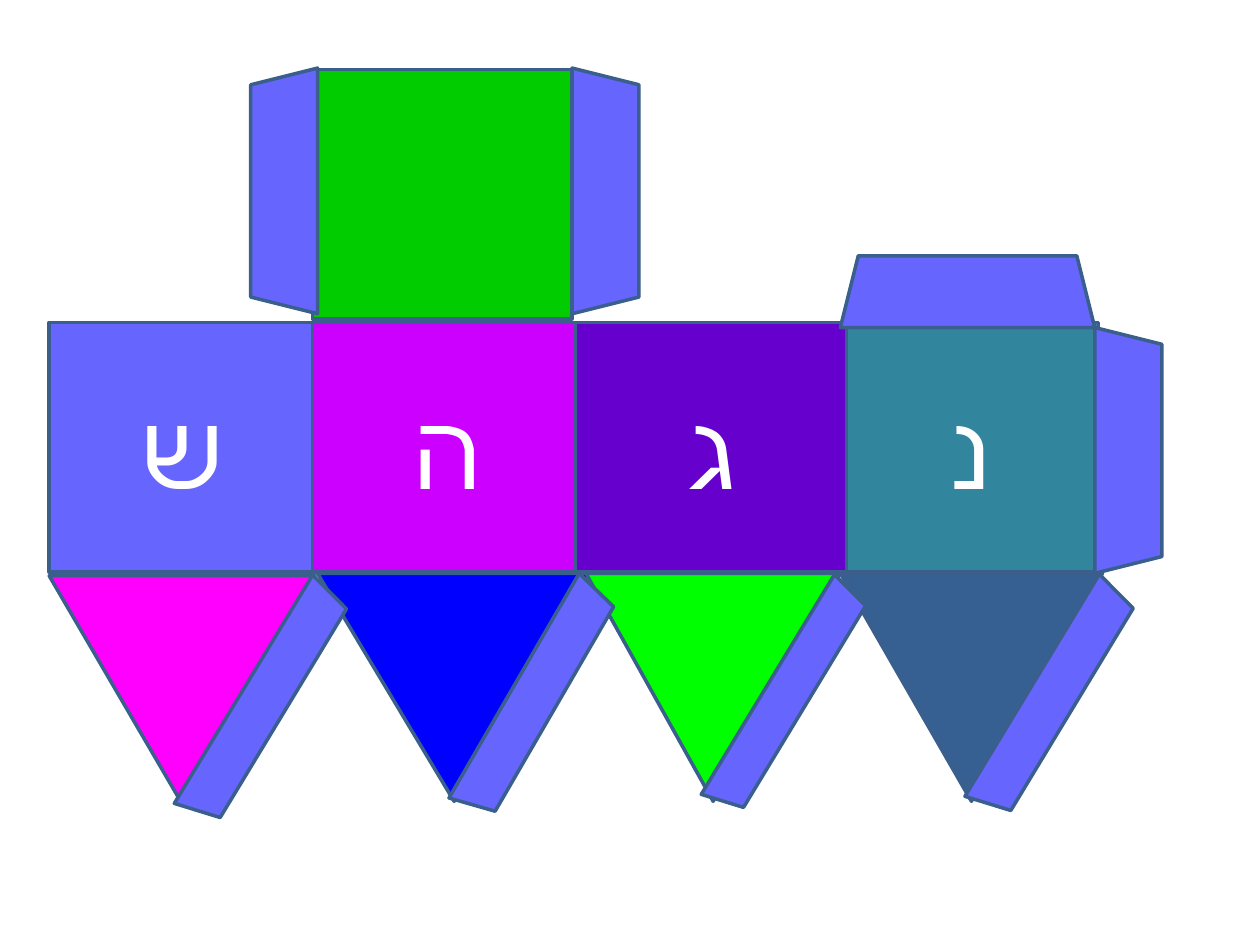
"""Build a one-page cut-and-fold dreidel net with four Hebrew letters."""
from dataclasses import dataclass

from lxml import etree
from pptx import Presentation
from pptx.dml.color import RGBColor
from pptx.enum import shapes, text
from pptx.oxml import ns
from pptx.util import Pt


@dataclass(frozen=True)
class Theme:
    font: str = "Lato"
    letter_size: int = 60
    letter: str = "FFFFFF"
    outline: str = "3A5F8C"
    outline_width: int = 2
    tab: str = "6666FF"


THEME = Theme()
KIND = shapes.MSO_SHAPE
PAGE_SIZE = (720, 540)

FACE_TOP, FACE_HEIGHT = 184.3, 142.6
LID_TOP = 39.6
POINT_TOP, POINT_HEIGHT = 327.6, 130.3
FLAP_LENGTH, FLAP_DEPTH = 140.4, 38.2

# left, top, width, colour, letter
FACES = [
    (479.5, FACE_TOP, 148.3, "31859C", "נ"),
    (178.6, LID_TOP, 148.3, "00CC00", ""),
    (28.1, FACE_TOP, 151.9, "6666FF", "ש"),
    (178.6, FACE_TOP, 153.4, "CC00FF", "ה"),
    (329, FACE_TOP, 154.8, "6600CC", "ג"),
]
# left, top, width, colour
POINTS = [
    (28.1, POINT_TOP + 1.4, 151.9, "FF00FF"),
    (181.4, POINT_TOP, 156.2, "0000FF"),
    (334.8, POINT_TOP, 145.4, "00FF00"),
    (480.2, POINT_TOP, 149.8, "376092"),
]
# left, top, turn
SIDE_FLAPS = [(275.8, 90, 90), (574.6, 238.3, 90), (92.2, 90, 270)]
# left, top, width, height, turn
OTHER_TABS = [
    (527, 385.2, 148.3, 26.6, 121.2),
    (74.2, 387.4, 152.6, 26.6, 121.2),
    (231.1, 385.2, 148.3, 26.6, 120.1),
    (375.8, 385.2, 146.9, 24.5, 121.2),
    (480.2, 146.2, 145.4, 41, 0),
]


def add_piece(net, kind, place, colour, turn=0):
    """Add one outlined piece of the net."""
    piece = net.shapes.add_shape(kind, *map(Pt, place))
    piece.shadow.inherit = False
    piece.rotation = turn
    piece.fill.solid()
    piece.fill.fore_color.rgb = RGBColor.from_string(colour)
    piece.line.color.rgb = RGBColor.from_string(THEME.outline)
    piece.line.width = Pt(THEME.outline_width)
    return piece


def add_letter(piece, letter):
    """Centre a right-to-left letter on a face."""
    frame = piece.text_frame
    frame.word_wrap = True
    frame.vertical_anchor = text.MSO_ANCHOR.MIDDLE
    para = frame.paragraphs[0]
    para.alignment = text.PP_ALIGN.CENTER
    para._p.get_or_add_pPr().set("rtl", "1")
    span = para.add_run()
    span.text = letter
    span.font.size = Pt(THEME.letter_size)
    span.font.name = THEME.font
    span.font.color.rgb = RGBColor.from_string(THEME.letter)
    etree.SubElement(span.font._element, ns.qn("a:cs"), typeface=THEME.font)


def main():
    """Lay out the faces, points and glue tabs, then save the deck."""
    deck = Presentation()
    deck.slide_width, deck.slide_height = map(Pt, PAGE_SIZE)
    page = deck.slides.add_slide(deck.slide_layouts[6])
    net = page.shapes.add_group_shape()

    for left, top, width, colour, letter in FACES:
        face = add_piece(net, KIND.RECTANGLE, (left, top, width, FACE_HEIGHT), colour)
        if letter:
            add_letter(face, letter)
    for left, top, width, colour in POINTS:
        place = (left, top, width, POINT_HEIGHT)
        add_piece(net, KIND.ISOSCELES_TRIANGLE, place, colour, 180)
    flaps = [(left, top, FLAP_LENGTH, FLAP_DEPTH, turn) for left, top, turn in SIDE_FLAPS]
    for *place, turn in flaps + OTHER_TABS:
        add_piece(net, KIND.TRAPEZOID, place, THEME.tab, turn)

    deck.save("out.pptx")


if __name__ == "__main__":
    main()
